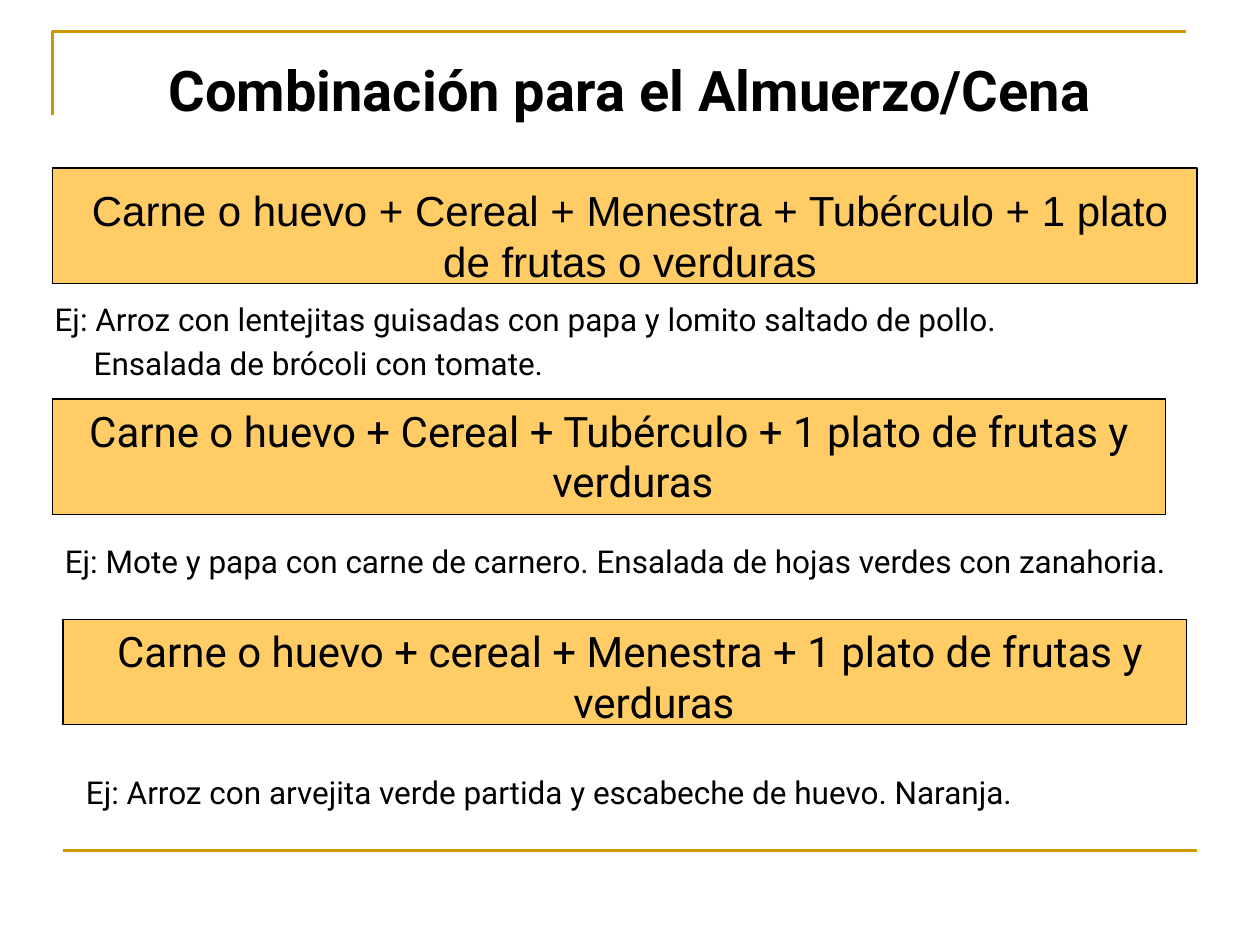
import dataclasses

import pptx
import pptx.dml.color
import pptx.enum.shapes
import pptx.enum.text
import pptx.oxml.ns
import pptx.util

COLUMNS, ROWS = 120, 90
ALIGN = pptx.enum.text.PP_ALIGN
ANCHOR = pptx.enum.text.MSO_ANCHOR


@dataclasses.dataclass(frozen=True)
class Theme:
    gold: str = "CC9900"
    band: str = "FFCC66"
    ink: str = "000000"
    font: str = "Roboto"
    band_font: str = "Arial"
    title_size: int = 32
    band_size: int = 24
    example_size: int = 18
    rule_width: float = 1.5
    border_width: float = 0.75
    hanging: float = 0.38
    space_share: float = 0.2


THEME = Theme()

# Each band: its box, its text box, text, font, and whether the text hangs.
# Boxes are left, top, width, height in grid columns and rows.
BANDS = [
    ((5, 16, 109, 11), (5, 17, 110, 10.8),
     "Carne o huevo + Cereal + Menestra + Tubérculo + 1 plato de frutas o verduras",
     THEME.band_font, False),
    ((5, 38, 106, 11), (4, 38, 108, 17),
     "Carne o huevo + Cereal + Tubérculo + 1 plato de frutas y verduras",
     THEME.font, True),
    ((6, 59, 107, 10), (6, 59, 108, 12),
     "Carne o huevo + cereal + Menestra + 1 plato de frutas y verduras",
     THEME.font, True),
]
FIRST_EXAMPLE = [
    "Ej: Arroz con lentejitas guisadas con papa y lomito saltado de pollo.",
    "Ensalada de brócoli con tomate.",
]
OTHER_EXAMPLES = [
    ((5, 51, 115, 5),
     "Ej: Mote y papa con carne de carnero. Ensalada de hojas verdes con zanahoria."),
    ((7, 73, 94, 5),
     "Ej: Arroz con arvejita verde partida y escabeche de huevo. Naranja."),
]


def set_values(target, values):
    for name, value in values.items():
        setattr(target, name, value)


def color(value):
    return pptx.dml.color.RGBColor.from_string(value)


def place(presentation, box):
    """Turn a box in grid units into lengths on the slide."""
    column = presentation.slide_width / COLUMNS
    row = presentation.slide_height / ROWS
    left, top, width, height = box
    return [round(length) for length in
            (left * column, top * row, width * column, height * row)]


def move(shape, lengths):
    set_values(shape, dict(zip(("left", "top", "width", "height"), lengths)))


def style_line(shape, value, width):
    shape.line.color.rgb = color(value)
    shape.line.width = pptx.util.Pt(width)


def set_frame(shape, anchor=ANCHOR.TOP):
    set_values(shape.text_frame, {
        "word_wrap": True,
        "auto_size": pptx.enum.text.MSO_AUTO_SIZE.NONE,
        "vertical_anchor": anchor,
    })


def write(paragraph, text, size, font=THEME.font, align=ALIGN.LEFT,
          margin=0, indent=0, spaced=True, bold=False):
    run = paragraph.add_run()
    run.text = text
    set_values(run.font, {"name": font, "size": pptx.util.Pt(size), "bold": bold})
    run.font.color.rgb = color(THEME.ink)
    set_values(paragraph, {
        "alignment": align,
        "space_before": pptx.util.Pt(size * THEME.space_share if spaced else 0),
    })
    properties = paragraph._p.get_or_add_pPr()
    properties.set("marL", str(pptx.util.Inches(margin)))
    properties.set("indent", str(pptx.util.Inches(indent)))
    properties.append(pptx.oxml.parse_xml(
        "<a:buNone %s/>" % pptx.oxml.ns.nsdecls("a")))


def add_text(presentation, slide, box, text, size, **values):
    shape = slide.shapes.add_textbox(*place(presentation, box))
    set_frame(shape)
    write(shape.text_frame.paragraphs[0], text, size, **values)


def add_rules(presentation, slide, corner_box, bottom_box):
    """Draw the corner rule above the title and the rule at the foot."""
    left, top, width, height = place(presentation, corner_box)
    builder = slide.shapes.build_freeform(left, top + height)
    builder.add_line_segments([(left, top), (left + width, top)], close=False)
    corner = builder.convert_to_shape()
    corner.fill.background()
    corner.shadow.inherit = False
    left, top, width, height = place(presentation, bottom_box)
    bottom = slide.shapes.add_connector(
        pptx.enum.shapes.MSO_CONNECTOR.STRAIGHT,
        left, top, left + width, top + height)
    bottom._element.spPr.append(pptx.oxml.parse_xml(
        "<a:effectLst %s/>" % pptx.oxml.ns.nsdecls("a")))
    for rule in (corner, bottom):
        style_line(rule, THEME.gold, THEME.rule_width)


def add_title(presentation, slide, box, text):
    title = slide.shapes.title
    move(title, place(presentation, box))
    set_frame(title, ANCHOR.MIDDLE)
    write(title.text_frame.paragraphs[0], text, THEME.title_size,
          align=ALIGN.CENTER, spaced=False, bold=True)


def add_band(presentation, slide, box, text_box, text, font, hangs):
    band = slide.shapes.add_shape(
        pptx.enum.shapes.MSO_SHAPE.RECTANGLE, *place(presentation, box))
    band.shadow.inherit = False
    band.fill.solid()
    band.fill.fore_color.rgb = color(THEME.band)
    style_line(band, THEME.ink, THEME.border_width)
    hanging = THEME.hanging if hangs else 0
    add_text(presentation, slide, text_box, text, THEME.band_size, font=font,
             align=ALIGN.CENTER, margin=hanging, indent=-hanging, spaced=hangs)


def add_first_example(presentation, slide, box, lines):
    body = slide.placeholders[1]
    move(body, place(presentation, box))
    set_frame(body)
    first, second = lines
    write(body.text_frame.paragraphs[0], first, THEME.example_size,
          margin=THEME.hanging, indent=-THEME.hanging)
    write(body.text_frame.add_paragraph(), second, THEME.example_size, margin=0.31)


def main():
    presentation = pptx.Presentation()
    set_values(presentation, {"slide_width": pptx.util.Inches(10),
                              "slide_height": pptx.util.Inches(7.5)})
    slide = presentation.slides.add_slide(presentation.slide_layouts[1])
    add_rules(presentation, slide, (5, 3, 108, 8), (6, 81, 108, 0))
    add_title(presentation, slide, (6, 4, 108, 9), "Combinación para el Almuerzo/Cena")
    add_first_example(presentation, slide, (4, 28, 108, 9.5), FIRST_EXAMPLE)
    for band in BANDS:
        add_band(presentation, slide, *band)
    for box, text in OTHER_EXAMPLES:
        add_text(presentation, slide, box, text, THEME.example_size,
                 margin=THEME.hanging, indent=-THEME.hanging)
    presentation.save("out.pptx")


if __name__ == "__main__":
    main()
